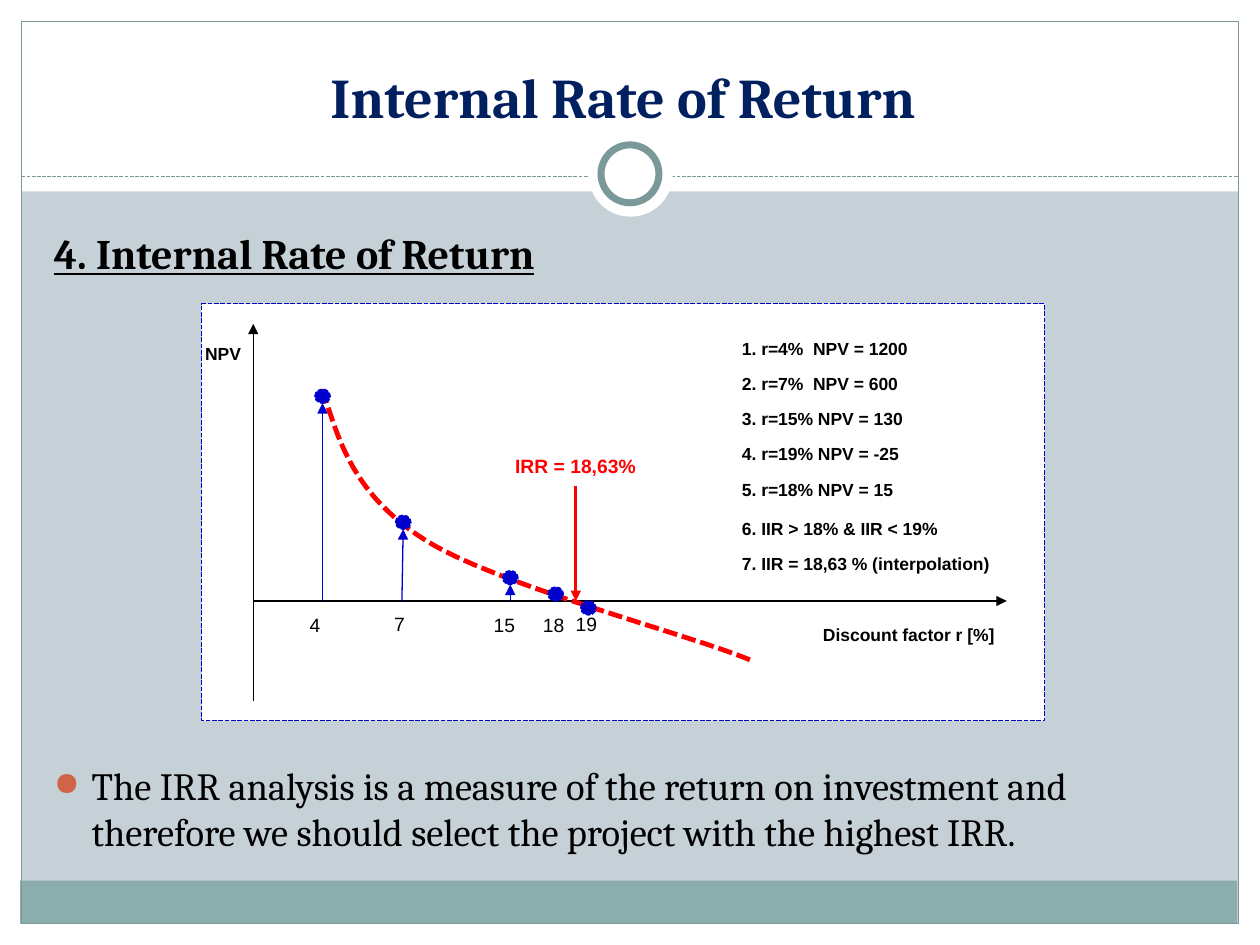
from typing import NamedTuple, Optional

from lxml.etree import SubElement
from pptx import Presentation
from pptx.dml.color import RGBColor
from pptx.enum.dml import MSO_LINE
from pptx.enum.shapes import MSO_CONNECTOR, MSO_SHAPE
from pptx.enum.text import MSO_ANCHOR, PP_ALIGN
from pptx.oxml.ns import qn
from pptx.util import Inches, Pt

WHITE = RGBColor(0xFF, 0xFF, 0xFF)
BLACK = RGBColor(0x00, 0x00, 0x00)
BACKGROUND = RGBColor(0xC5, 0xD1, 0xD7)
FOOTER = RGBColor(0x8C, 0xAD, 0xAE)
FRAME = RGBColor(0x7C, 0x99, 0x9A)
NAVY = RGBColor(0x00, 0x20, 0x60)
BLUE = RGBColor(0x00, 0x00, 0xCC)
RED = RGBColor(0xFF, 0x00, 0x00)
DASH = MSO_LINE.SQUARE_DOT
RECTANGLE, ELLIPSE = MSO_SHAPE.RECTANGLE, MSO_SHAPE.OVAL

AXIS_X, AXIS_Y = 2.01, 4.77
DOT_WIDTH, DOT_HEIGHT = 0.12, 0.11


class Block(NamedTuple):
    kind: MSO_SHAPE
    box: tuple
    fill: Optional[RGBColor] = None
    line: Optional[RGBColor] = None
    weight: float = 0.75
    dash: Optional[MSO_LINE] = None


class Line(NamedTuple):
    start: tuple
    end: tuple
    color: RGBColor
    weight: float = 0.75
    arrow: bool = True
    dash: Optional[MSO_LINE] = None


class Label(NamedTuple):
    text: str
    box: tuple
    format: dict
    align: PP_ALIGN = PP_ALIGN.LEFT


class RatePoint(NamedTuple):
    rate: str
    x: float
    top: float
    label_left: float
    label_top: float
    stem_foot: Optional[float] = None


BOLD_10 = dict(name="Arial", size=Pt(10), bold=True, color=BLACK)
PLAIN_11 = dict(name="Arial", size=Pt(11), bold=False, color=BLACK)
RED_11 = dict(name="Arial", size=Pt(11), bold=True, color=RED)
TITLE = dict(name="Cambria", size=Pt(32), bold=True, color=NAVY)
HEADING = dict(name="Cambria", size=Pt(24), bold=True, underline=True, color=BLACK)
BODY = dict(name="Cambria", size=Pt(22), bold=False, color=BLACK)

BACKDROP = [
    Block(RECTANGLE, (0, 7.33, 10, 0.17), WHITE),
    Block(RECTANGLE, (0, 0, 10, 1.52), WHITE),
    Block(RECTANGLE, (0, 0, 0.17, 7.5), WHITE),
    Block(RECTANGLE, (9.83, 0, 0.17, 7.5), WHITE),
    Block(RECTANGLE, (0.16, 6.99, 9.66, 0.34), FOOTER),
    Block(RECTANGLE, (0.17, 0.17, 9.66, 7.16), None, FRAME),
]
RINGS = [
    Block(ELLIPSE, (4.67, 1.05, 0.67, 0.67), WHITE),
    Block(ELLIPSE, (4.77, 1.15, 0.46, 0.46), WHITE, FRAME, 4),
]
DIVIDER = Line((0.17, 1.4), (9.83, 1.4), FRAME, arrow=False, dash=DASH)
GRAPH_PANEL = Block(RECTANGLE, (1.6, 2.41, 6.69, 3.31), WHITE, BLUE, 0.9, DASH)
AXES = [
    Line((AXIS_X, 5.56), (AXIS_X, 2.57), BLACK),
    Line((AXIS_X, AXIS_Y), (7.99, AXIS_Y), BLACK),
]
IRR_ARROW = Line((4.57, 3.86), (4.57, AXIS_Y), RED, 1.5)
CURVE = [
    ((2.56, 3.09), (2.69, 3.51), (2.81, 3.93), (3.38, 4.29)),
    ((3.38, 4.29), (3.95, 4.65), (5.56, 5.06), (5.98, 5.25)),
]
POINTS = [
    RatePoint("4", 2.56, 3.09, 2.36, 4.82, 2.56),
    RatePoint("7", 3.2, 4.09, 3.03, 4.81, 3.19),
    RatePoint("15", 4.05, 4.53, 3.82, 4.82, 4.05),
    RatePoint("18", 4.41, 4.66, 4.21, 4.82),
    RatePoint("19", 4.67, 4.77, 4.47, 4.81),
]
STEPS = [
    ("1. r=4%  NPV = 1200", 2.63),
    ("2. r=7%  NPV = 600", 2.91),
    ("3. r=15% NPV = 130", 3.19),
    ("4. r=19% NPV = -25", 3.47),
    ("5. r=18% NPV = 15", 3.75),
    ("6. IIR > 18% & IIR < 19%", 4.06),
    ("7. IIR = 18,63 % (interpolation)", 4.34),
]
LABELS = [
    Label("NPV", (1.53, 2.67, 0.55, 0.27), BOLD_10),
    Label("Discount factor r [%]", (6.02, 4.9, 1.97, 0.27), BOLD_10, PP_ALIGN.RIGHT),
    Label("IRR = 18,63%", (3.99, 3.56, 1.32, 0.29), RED_11),
    Label("4. Internal Rate of Return", (0.33, 1.76, 9.16, 0.5), HEADING),
    *(Label(text, (5.79, top, 2.27, 0.27), BOLD_10) for text, top in STEPS),
]


def inches(values: tuple) -> list:
    return [Inches(value) for value in values]


def style_line(line, color: RGBColor, weight: float, dash) -> None:
    line.color.rgb = color
    line.width = Pt(weight)
    if dash is not None:
        line.dash_style = dash


def write_text(frame, text: str, format: dict, align: PP_ALIGN):
    frame.word_wrap = True
    paragraph = frame.paragraphs[0]
    paragraph.alignment = align
    run = paragraph.add_run()
    run.text = text
    for name, value in format.items():
        if name == "color":
            run.font.color.rgb = value
        else:
            setattr(run.font, name, value)
    return paragraph


def draw_block(shapes, block: Block) -> None:
    shape = shapes.add_shape(block.kind, *inches(block.box))
    shape.shadow.inherit = False
    if block.fill is None:
        shape.fill.background()
    else:
        shape.fill.solid()
        shape.fill.fore_color.rgb = block.fill
    if block.line is None:
        shape.line.fill.background()
    else:
        style_line(shape.line, block.line, block.weight, block.dash)


def draw_line(shapes, line: Line) -> None:
    connector = shapes.add_connector(MSO_CONNECTOR.STRAIGHT, *inches(line.start + line.end))
    style_line(connector.line, line.color, line.weight, line.dash)
    if line.arrow:
        SubElement(connector.line._get_or_add_ln(), qn("a:tailEnd"), type="triangle")
    SubElement(connector._element.spPr, qn("a:effectLst"))


def draw_label(shapes, label: Label):
    box = shapes.add_textbox(*inches(label.box))
    return write_text(box.text_frame, label.text, label.format, label.align)


def bezier_point(controls: tuple, t: float) -> tuple:
    weights = ((1 - t) ** 3, 3 * t * (1 - t) ** 2, 3 * t**2 * (1 - t), t**3)
    return tuple(sum(w * c[axis] for w, c in zip(weights, controls)) for axis in (0, 1))


def draw_curve(shapes, segments: list, steps: int = 24) -> None:
    builder = shapes.build_freeform(*inches(segments[0][0]))
    builder.add_line_segments(
        [inches(bezier_point(segment, step / steps))
         for segment in segments for step in range(1, steps + 1)],
        close=False,
    )
    curve = builder.convert_to_shape()
    curve.shadow.inherit = False
    curve.fill.background()
    style_line(curve.line, RED, 2.75, DASH)


def draw_rate_point(shapes, point: RatePoint) -> None:
    if point.stem_foot is not None:
        draw_line(shapes, Line((point.stem_foot, AXIS_Y), (point.x, point.top + DOT_HEIGHT), BLUE))
    dot = (point.x - DOT_WIDTH / 2, point.top, DOT_WIDTH, DOT_HEIGHT)
    draw_block(shapes, Block(ELLIPSE, dot, BLUE, BLUE, 0.9, DASH))
    draw_label(shapes, Label(point.rate, (point.label_left, point.label_top, 0.48, 0.29), PLAIN_11))


def draw_conclusion(shapes) -> None:
    text = ("The IRR analysis is a measure of the return on investment and "
            "therefore we should select the project with the highest IRR.")
    paragraph = draw_label(shapes, Label(text, (0.33, 6, 9.16, 0.85), BODY))
    properties = paragraph._p.get_or_add_pPr()
    properties.set("marL", str(Inches(0.3)))
    properties.set("indent", str(Inches(-0.3)))
    color = SubElement(properties, qn("a:buClr"))
    SubElement(color, qn("a:srgbClr"), val="D16349")
    SubElement(properties, qn("a:buSzPct"), val="85000")
    SubElement(properties, qn("a:buChar"), char="●")


def main() -> None:
    presentation = Presentation()
    presentation.slide_width, presentation.slide_height = Inches(10), Inches(7.5)
    slide = presentation.slides.add_slide(presentation.slide_layouts[5])
    slide.background.fill.solid()
    slide.background.fill.fore_color.rgb = BACKGROUND
    shapes = slide.shapes

    for block in BACKDROP:
        draw_block(shapes, block)
    draw_line(shapes, DIVIDER)
    for ring in RINGS:
        draw_block(shapes, ring)

    title = shapes.title
    title.left, title.top, title.width, title.height = inches((0.33, 0.25, 9.33, 0.83))
    title.text_frame.vertical_anchor = MSO_ANCHOR.BOTTOM
    write_text(title.text_frame, "Internal Rate of Return ", TITLE, PP_ALIGN.CENTER)
    shapes._spTree.append(title._element)  # bring in front of the backdrop

    draw_block(shapes, GRAPH_PANEL)
    for axis in AXES:
        draw_line(shapes, axis)
    draw_curve(shapes, CURVE)
    for point in POINTS:
        draw_rate_point(shapes, point)
    draw_line(shapes, IRR_ARROW)
    for label in LABELS:
        draw_label(shapes, label)
    draw_conclusion(shapes)
    presentation.save("out.pptx")


if __name__ == "__main__":
    main()
